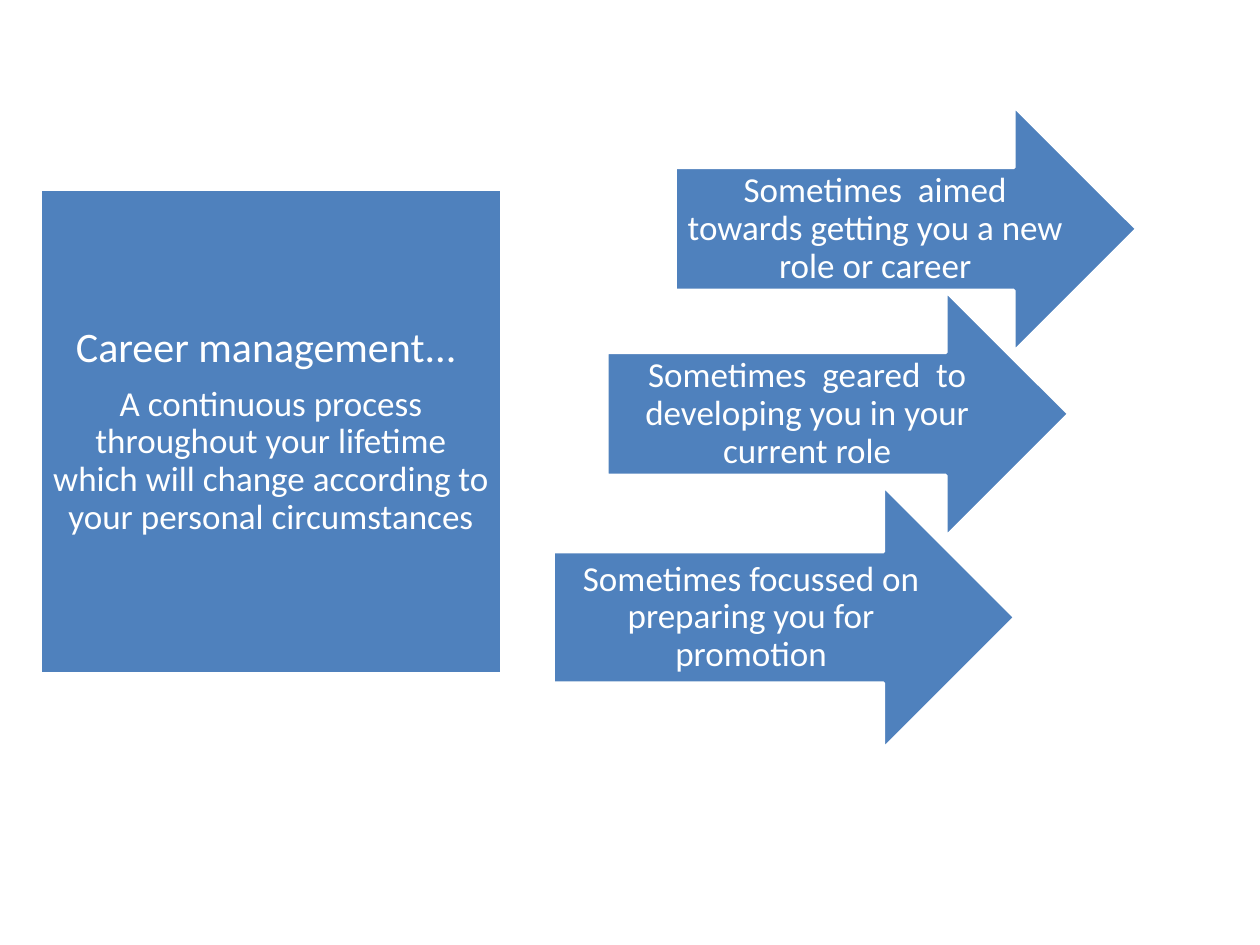
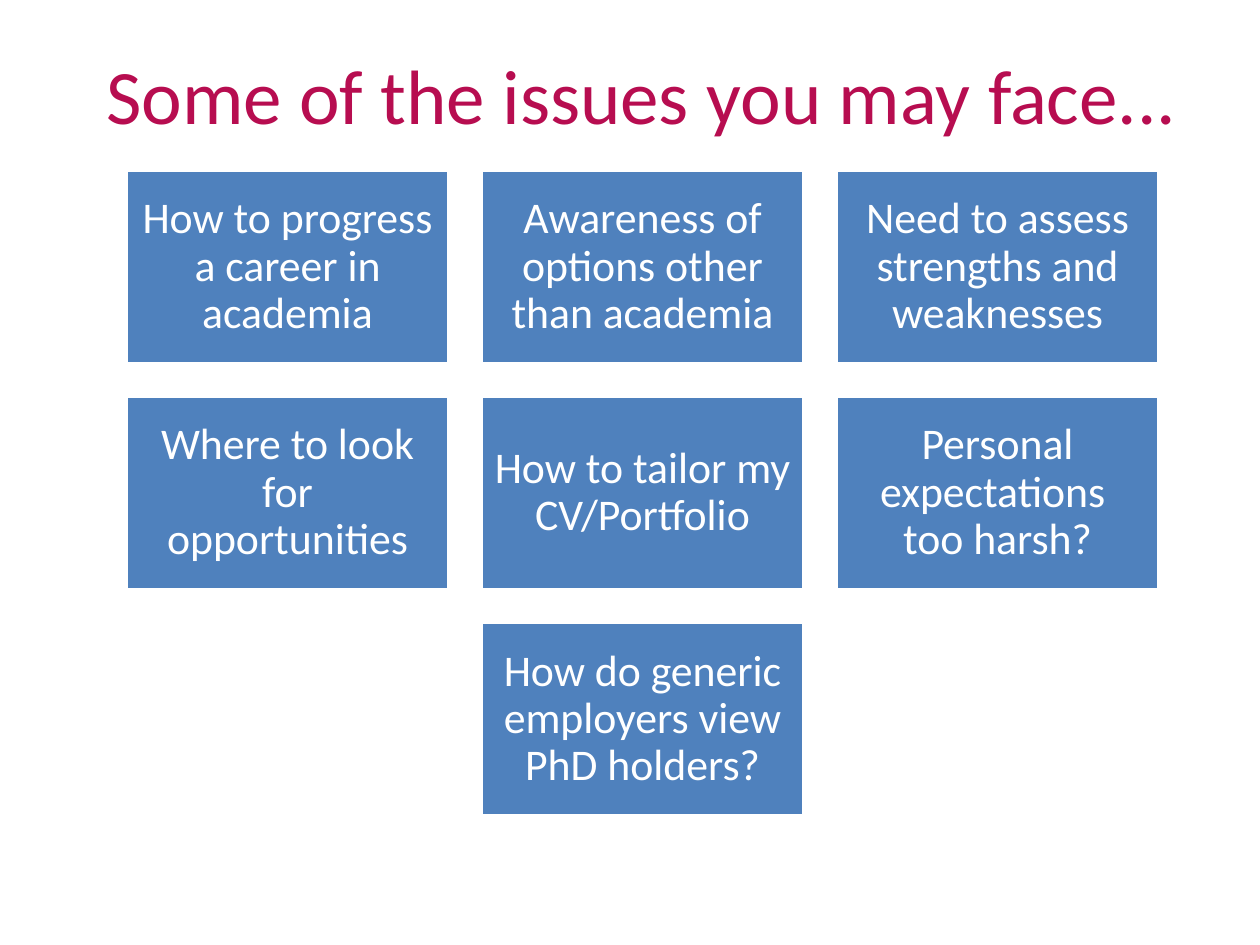
"""Build two career slides: a statement with arrows, and a grid of issues."""
from pptx import Presentation
from pptx.dml.color import RGBColor
from pptx.enum.shapes import MSO_SHAPE
from pptx.enum.text import MSO_ANCHOR, PP_ALIGN
from pptx.util import Emu, Pt

RECTANGLE = MSO_SHAPE.RECTANGLE
ARROW = MSO_SHAPE.RIGHT_ARROW
CENTER = PP_ALIGN.CENTER
MIDDLE = MSO_ANCHOR.MIDDLE

PX_PER_INCH = 126
FONT = "Calibri"
COLORS = {"block": "4F81BD", "white": "FFFFFF", "title": "B70D50"}
TITLE_LAYOUT, BLANK_LAYOUT = 0, 6

STATEMENT = [
    ("Career management... ", 24),
    ("A continuous process throughout your lifetime "
     "which will change according to your personal circumstances", 20),
]
ARROWS = [
    ("Sometimes  geared  to developing you in your current role", (607, 291, 462, 246)),
    ("Sometimes focussed on preparing you for promotion", (553, 486, 462, 263)),
    ("Sometimes  aimed towards getting you a new role or career", (675, 106, 462, 246)),
]
ISSUE_ROWS = [
    ["How to progress a career in academia",
     "Awareness of options other than academia",
     "Need to assess strengths and weaknesses"],
    ["Where to look for opportunities",
     "How to tailor my CV/Portfolio",
     "Personal expectations  too harsh?"],
    ["How do generic employers view PhD holders?"],
]
GRID_LEFT, GRID_TOP, GRID_COLUMNS = 126, 170, 3
TILE_WIDTH, TILE_HEIGHT, TILE_GAP = 323, 194, 32


def px(value):
    """Turn pixels into EMU."""
    return Emu(round(value * 914400 / PX_PER_INCH))


def color(name):
    """Look up a named colour."""
    return RGBColor.from_string(COLORS[name])


def add_span(para, text, size, color_name):
    """Add one formatted run to a centred paragraph."""
    para.alignment = CENTER
    span = para.add_run()
    span.text = text
    span.font.name = FONT
    span.font.size = Pt(size)
    span.font.color.rgb = color(color_name)


def add_block(page, kind, bounds, lines, inset):
    """Add a filled shape holding centred white lines of (text, size)."""
    block = page.shapes.add_shape(kind, *map(px, bounds))
    block.shadow.inherit = False
    block.fill.solid()
    block.fill.fore_color.rgb = color("block")
    block.line.color.rgb = color("white")
    block.line.width = Pt(2)
    frame = block.text_frame
    frame.word_wrap = True
    frame.vertical_anchor = MIDDLE
    frame.margin_left = frame.margin_right = px(inset)
    frame.margin_top = frame.margin_bottom = px(inset)
    for index, (text, size) in enumerate(lines):
        para = frame.add_paragraph() if index else frame.paragraphs[0]
        para.line_spacing = 0.9
        para.space_after = Pt(0.35 * size)
        add_span(para, text, size, "white")


def add_title(page, text):
    """Place and format the title placeholder."""
    title = page.shapes.title
    title.left, title.top, title.width, title.height = map(px, (63, 19, 1158, 149))
    title.text_frame.vertical_anchor = MIDDLE
    add_span(title.text_frame.paragraphs[0], text, 44, "title")


def add_tile_grid(page, rows):
    """Lay out tiles in rows, centring a short row."""
    column_step = TILE_WIDTH + TILE_GAP
    row_step = TILE_HEIGHT + TILE_GAP
    for row, texts in enumerate(rows):
        first_column = (GRID_COLUMNS - len(texts)) / 2
        for column, text in enumerate(texts, 0):
            left = GRID_LEFT + (first_column + column) * column_step
            top = GRID_TOP + row * row_step
            bounds = (left, top, TILE_WIDTH, TILE_HEIGHT)
            add_block(page, RECTANGLE, bounds, [(text, 25)], 13)


def build_management_page(deck):
    """Build the career management slide."""
    page = deck.slides.add_slide(deck.slide_layouts[BLANK_LAYOUT])
    add_block(page, RECTANGLE, (40, 189, 462, 485), STATEMENT, 13)
    for text, bounds in ARROWS:
        add_block(page, ARROW, bounds, [(text, 20)], 10)


def build_issues_page(deck):
    """Build the slide of issues."""
    page = deck.slides.add_slide(deck.slide_layouts[TITLE_LAYOUT])
    subtitle = page.placeholders[1].element
    subtitle.getparent().remove(subtitle)
    add_title(page, "Some of the issues you may face...")
    add_tile_grid(page, ISSUE_ROWS)


def main():
    """Build and save the deck."""
    deck = Presentation()
    deck.slide_width, deck.slide_height = px(1260), px(945)
    build_management_page(deck)
    build_issues_page(deck)
    deck.save("out.pptx")


if __name__ == "__main__":
    main()
